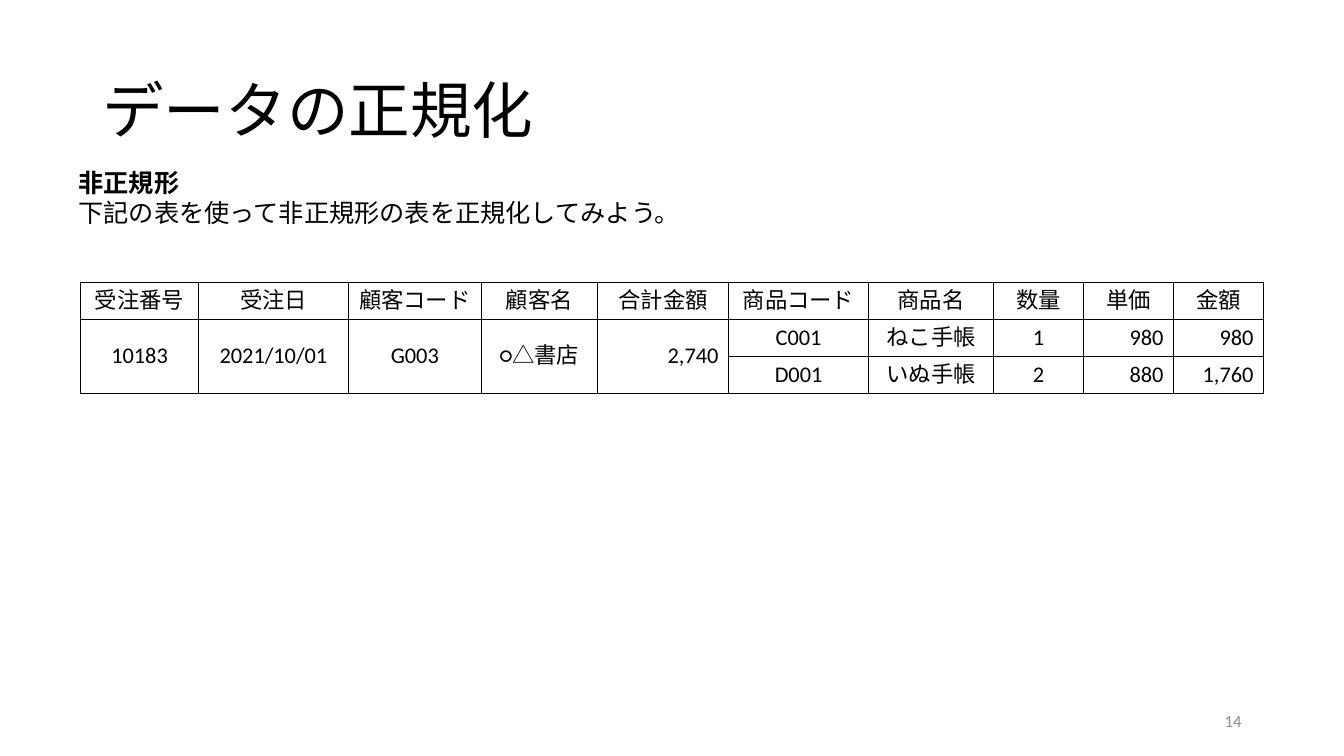
from pptx import Presentation
from pptx.dml.color import RGBColor
from pptx.enum.text import MSO_ANCHOR, PP_ALIGN
from pptx.oxml import parse_xml
from pptx.oxml.ns import nsdecls
from pptx.util import Pt

BLACK = RGBColor(0x00, 0x00, 0x00)
GRAY = RGBColor(0x8C, 0x8C, 0x8C)
FONT = "Calibri"

COLUMN_WIDTHS = [84.3, 107, 95, 83, 93.6, 100, 89.3, 64.3, 64.3, 64.3]
ROW_HEIGHT = 26.4
ORDER_ROWS = [
    ["受注番号", "受注日", "顧客コード", "顧客名", "合計金額",
     "商品コード", "商品名", "数量", "単価", "金額"],
    ["10183", "2021/10/01", "G003", "○△書店", "2,740",
     "C001", "ねこ手帳", "1", "980", "980"],
    ["", "", "", "", "", "D001", "いぬ手帳", "2", "880", "1,760"],
]
ORDER_COLUMNS = 5
AMOUNT_COLUMNS = {4, 8, 9}


def format_paragraph(paragraph, size, color=BLACK, bold=False, align=PP_ALIGN.LEFT):
    paragraph.alignment = align
    for run in paragraph.runs:
        run.font.name = FONT
        run.font.size = Pt(size)
        run.font.bold = bold
        run.font.color.rgb = color
        east_asian = parse_xml(f'<a:ea {nsdecls("a")} typeface="{FONT}"/>')
        run.font._element.find("{*}latin").addnext(east_asian)


def add_text(slide, left, top, width, height, text, anchor=MSO_ANCHOR.MIDDLE):
    frame = slide.shapes.add_textbox(Pt(left), Pt(top), Pt(width), Pt(height)).text_frame
    frame.word_wrap = True
    frame.vertical_anchor = anchor
    frame.text = text
    return frame.paragraphs


def add_borders(cell):
    properties = cell._tc.get_or_add_tcPr()
    for side in ("lnL", "lnR", "lnT", "lnB"):
        properties.append(parse_xml(
            f'<a:{side} {nsdecls("a")} w="{Pt(1)}"><a:solidFill>'
            f'<a:srgbClr val="{BLACK}"/></a:solidFill></a:{side}>'))


def add_order_table(slide, left, top):
    table = slide.shapes.add_table(
        len(ORDER_ROWS), len(COLUMN_WIDTHS), Pt(left), Pt(top),
        Pt(sum(COLUMN_WIDTHS)), Pt(ROW_HEIGHT * len(ORDER_ROWS))).table
    table.first_row = False
    table.horz_banding = False
    for column, width in zip(table.columns, COLUMN_WIDTHS):
        column.width = Pt(width)
    for row_index, values in enumerate(ORDER_ROWS):
        table.rows[row_index].height = Pt(ROW_HEIGHT)
        for column_index, value in enumerate(values):
            cell = table.cell(row_index, column_index)
            cell.text = value
            add_borders(cell)
            cell.fill.background()
            is_header = row_index == 0
            is_amount = column_index in AMOUNT_COLUMNS and not is_header
            cell.vertical_anchor = MSO_ANCHOR.TOP if is_header else MSO_ANCHOR.MIDDLE
            format_paragraph(cell.text_frame.paragraphs[0], 16,
                             align=PP_ALIGN.RIGHT if is_amount else PP_ALIGN.CENTER)
    for column_index in range(ORDER_COLUMNS):
        table.cell(1, column_index).merge(table.cell(2, column_index))


def main():
    presentation = Presentation()
    presentation.slide_width = Pt(960)
    presentation.slide_height = Pt(540)
    slide = presentation.slides.add_slide(presentation.slide_layouts[6])

    title, = add_text(slide, 66, 28.8, 828, 104.4, "データの正規化")
    title.line_spacing = 0.9
    format_paragraph(title, 44)

    heading, instruction = add_text(
        slide, 49, 116, 863, 51,
        "非正規形\n下記の表を使って非正規形の表を正規化してみよう。", MSO_ANCHOR.TOP)
    format_paragraph(heading, 18, bold=True)
    format_paragraph(instruction, 18)

    add_order_table(slide, 57.6, 201.6)

    page_number, = add_text(slide, 678, 500.5, 216, 28.8, "14")
    format_paragraph(page_number, 12, GRAY, align=PP_ALIGN.RIGHT)

    presentation.save("out.pptx")


if __name__ == "__main__":
    main()
